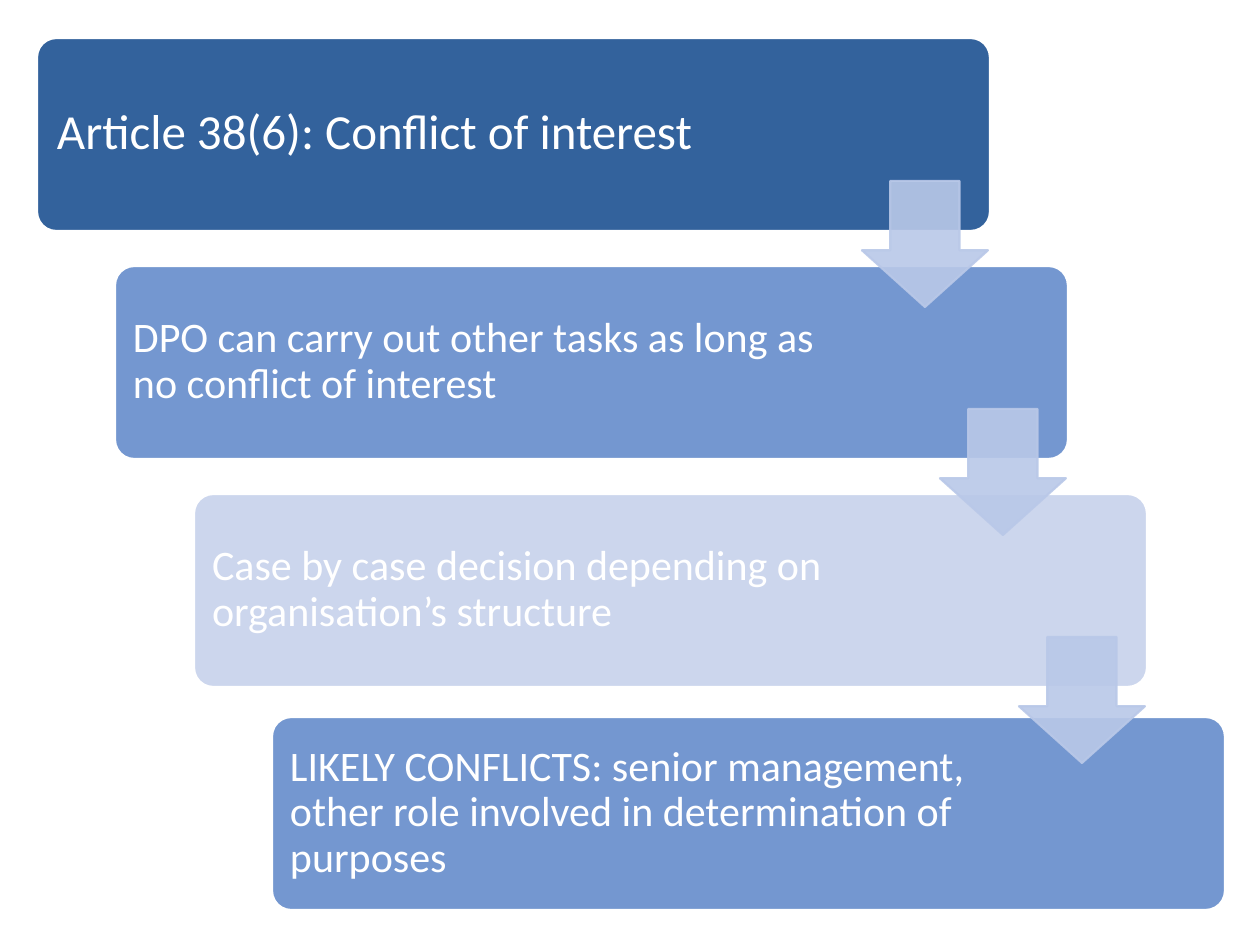
from lxml.etree import SubElement
from pptx import Presentation
from pptx.dml.color import RGBColor
from pptx.enum.shapes import MSO_SHAPE
from pptx.enum.text import MSO_ANCHOR, MSO_AUTO_SIZE, PP_ALIGN
from pptx.oxml.ns import qn
from pptx.util import Pt

EMU_PER_PX = 914400 / 126
STEP_WIDTH, STEP_HEIGHT = 953, 193
ARROW_SIZE = 126
STEPS = [
    (37, 38, "33629C", "Article 38(6): Conflict of interest"),
    (115, 266, "7497D0", "DPO can carry out other tasks as long as no conflict of interest"),
    (194, 494, "CCD6ED", "Case by case decision depending on organisation’s structure"),
    (272, 717, "7497D0", "LIKELY CONFLICTS: senior management, other role involved in determination of purposes"),
]


def px(length):
    """Turn pixels into EMU."""
    return round(length * EMU_PER_PX)


def color(hex_string):
    """Turn a hex string into a colour."""
    return RGBColor.from_string(hex_string)


def add_block(slide, kind, box, adjustments, fill, line):
    """Add a filled and outlined preset shape in the given box."""
    shape = slide.shapes.add_shape(kind, *map(px, box))
    for index, value in enumerate(adjustments):
        shape.adjustments[index] = value
    shape.shadow.inherit = False
    shape.fill.solid()
    shape.fill.fore_color.rgb = color(fill)
    shape.line.color.rgb = color(line)
    shape.line.width = Pt(1.25)
    return shape


def write_label(shape, box, text, size, inset):
    """Place a text shape in its box and write one left-aligned paragraph."""
    shape.left, shape.top, shape.width, shape.height = map(px, box)
    frame = shape.text_frame
    frame.text = text
    frame.word_wrap = True
    frame.auto_size = MSO_AUTO_SIZE.NONE
    frame.vertical_anchor = MSO_ANCHOR.MIDDLE
    frame.margin_left = frame.margin_right = px(inset)
    frame.margin_top = frame.margin_bottom = px(inset)
    paragraph = frame.paragraphs[0]
    paragraph.alignment = PP_ALIGN.LEFT
    paragraph.line_spacing = 0.9
    paragraph.space_after = Pt(round(size * 0.35, 1))
    paragraph.font.name = "Calibri"
    paragraph.font.size = Pt(size)
    paragraph.font.color.rgb = color("FFFFFF")


def add_step(slide, left, top, fill, text, is_title):
    """Add one step of the staircase, the first one holding the slide title."""
    box = (left, top, STEP_WIDTH, STEP_HEIGHT)
    add_block(slide, MSO_SHAPE.ROUNDED_RECTANGLE, box, [0.1], fill, "FFFFFF")
    if is_title:
        label = slide.shapes.title
        slide.shapes._spTree.append(label._element)
        width, size, inset = 728, 28, 15
    else:
        label = slide.shapes.add_textbox(0, 0, 0, 0)
        width, size, inset = 737, 24, 13
    write_label(label, (left + 5, top + 5, width, 182), text, size, inset)


def add_arrow(slide, left, top):
    """Add the translucent arrow that leads down from the step at left, top."""
    box = (left + 825, top + 143, ARROW_SIZE, ARROW_SIZE)
    arrow = add_block(slide, MSO_SHAPE.DOWN_ARROW, box, [0.55, 0.45], "B9C8E8", "B9C8E8")
    for rgb in arrow._element.spPr.iter(qn("a:srgbClr")):
        SubElement(rgb, qn("a:alpha"), val="90000")


def main():
    """Build the slide and save it."""
    presentation = Presentation()
    presentation.slide_width, presentation.slide_height = px(1260), px(945)
    slide = presentation.slides.add_slide(presentation.slide_layouts[5])
    for index, (left, top, fill, text) in enumerate(STEPS):
        add_step(slide, left, top, fill, text, index == 0)
    for left, top, *_ in STEPS[:-1]:
        add_arrow(slide, left, top)
    presentation.save("out.pptx")


if __name__ == "__main__":
    main()
